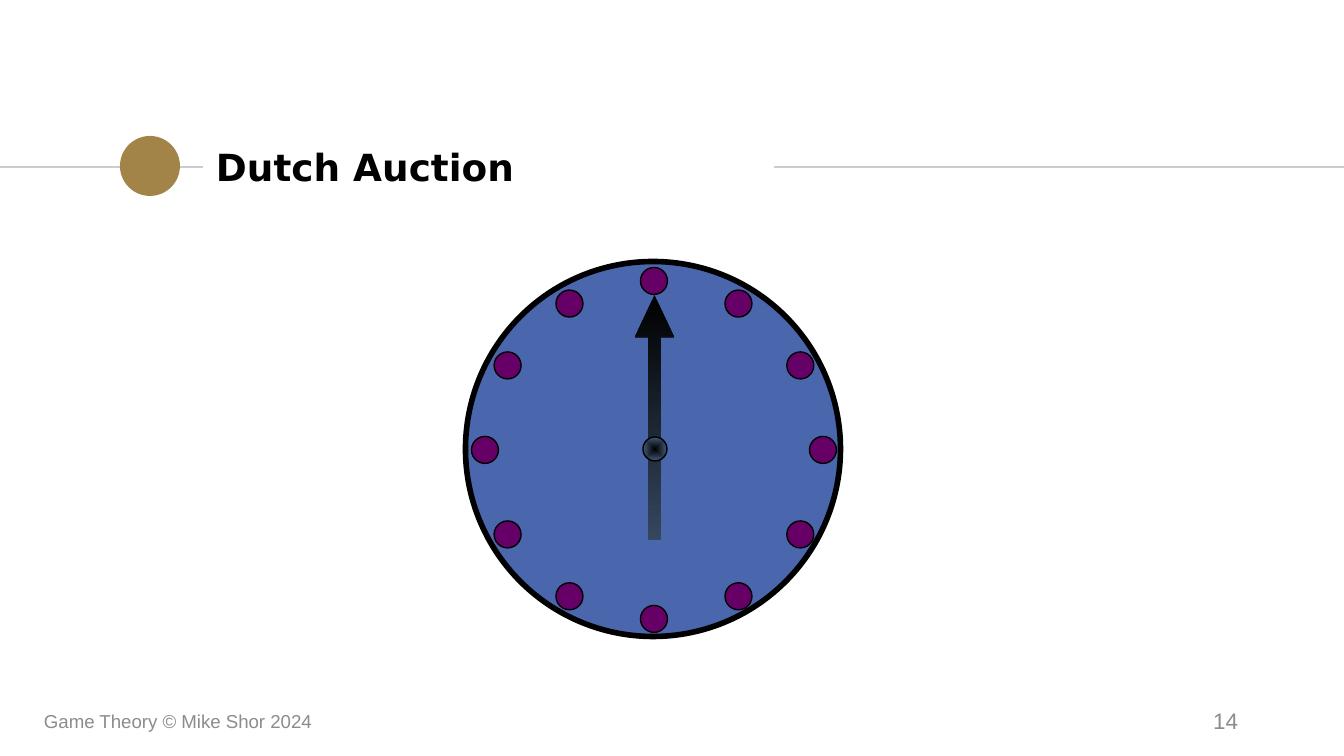
from math import cos, radians, sin

from lxml import etree
from pptx import Presentation
from pptx.dml.color import RGBColor
from pptx.enum.shapes import MSO_CONNECTOR, MSO_SHAPE
from pptx.enum.text import MSO_ANCHOR, PP_ALIGN
from pptx.oxml import parse_xml
from pptx.oxml.ns import nsdecls, qn
from pptx.util import Pt

PX = 914400 / 134.4
OVAL, RECT, UP_ARROW = MSO_SHAPE.OVAL, MSO_SHAPE.RECTANGLE, MSO_SHAPE.UP_ARROW
STRAIGHT = MSO_CONNECTOR.STRAIGHT
MIDDLE = MSO_ANCHOR.MIDDLE
LEFT, RIGHT = PP_ALIGN.LEFT, PP_ALIGN.RIGHT
LEFT_SIDE, RIGHT_SIDE = 1, 3

BLACK = RGBColor(0x00, 0x00, 0x00)
GOLD = RGBColor(0xA2, 0x84, 0x48)
RULE_GREY = RGBColor(0xCC, 0xCC, 0xCC)
FOOTER_GREY = RGBColor(0x8C, 0x8C, 0x8C)
FACE_BLUE = RGBColor(0x4A, 0x66, 0xAC)
MARK_PURPLE = RGBColor(0x66, 0x00, 0x66)
SLATE = RGBColor(0x43, 0x59, 0x77)

TITLE_FONT = {"name": "DejaVu Sans", "size": Pt(20), "bold": True}
FOOTER_FONT = {"name": "Arial", "size": Pt(10)}
NUMBER_FONT = {"name": "Arial", "size": Pt(12)}


def px(*lengths):
    return [round(length * PX) for length in lengths]


class SlideBuilder:
    def __init__(self, slide):
        self.slide = slide
        self.shapes = slide.shapes

    def text(self, box, words, font, color, align=LEFT):
        label = self.shapes.add_textbox(*px(*box))
        frame = label.text_frame
        inset = px(13)[0]
        layout = {"word_wrap": True, "vertical_anchor": MIDDLE,
                  "margin_left": inset, "margin_right": inset}
        for name, value in layout.items():
            setattr(frame, name, value)
        paragraph = frame.paragraphs[0]
        paragraph.alignment = align
        run = paragraph.add_run()
        run.text = words
        for name, value in font.items():
            setattr(run.font, name, value)
        run.font.color.rgb = color
        return label

    def shape(self, kind, box, fill=None, line_width=None):
        shape = self.shapes.add_shape(kind, *px(*box))
        shape.shadow.inherit = False
        if fill is not None:
            shape.fill.solid()
            shape.fill.fore_color.rgb = fill
        if line_width:
            shape.line.color.rgb = BLACK
            shape.line.width = Pt(line_width)
        else:
            shape.line.fill.background()
        return shape

    def disc(self, x, y, size, fill=None, line_width=None):
        box = (x - size / 2, y - size / 2, size, size)
        return self.shape(OVAL, box, fill, line_width)

    def gradient(self, shape, start, end, radial=False):
        shape.fill.gradient()
        for stop, color in zip(shape.fill.gradient_stops, (start, end)):
            stop.color.rgb = color
        if not radial:
            shape.fill.gradient_angle = 270
            return
        linear = shape._element.spPr.find(".//" + qn("a:lin"))
        linear.getparent().replace(linear, parse_xml(
            f'<a:path {nsdecls("a")} path="shape"><a:fillToRect '
            'l="50000" t="50000" r="50000" b="50000"/></a:path>'))

    def rule(self, start_x, end_x, y):
        rule = self.shapes.add_connector(STRAIGHT, *px(start_x, y, end_x, y))
        rule.line.color.rgb = RULE_GREY
        rule.line.width = Pt(0.75)
        etree.SubElement(rule._element.spPr, qn("a:effectLst"))
        return rule


def main():
    deck = Presentation()
    deck.slide_width, deck.slide_height = px(1344, 756)
    builder = SlideBuilder(deck.slides.add_slide(deck.slide_layouts[6]))

    # Title between two rules, with the gold disc on the left one
    title = builder.text((203, 135, 571, 64), "Dutch Auction", TITLE_FONT, BLACK)
    builder.rule(0, 203, 167).end_connect(title, LEFT_SIDE)
    builder.rule(774, 1344, 167).begin_connect(title, RIGHT_SIDE)
    builder.disc(150, 166, 60, GOLD)

    # Clock face with twelve marks
    center_x, center_y, mark_radius = 654, 450, 169
    builder.disc(653, 449, 375, FACE_BLUE, 3)
    for hour in range(12):
        angle = radians(30 * hour)
        builder.disc(center_x + mark_radius * sin(angle),
                     center_y - mark_radius * cos(angle),
                     27, MARK_PURPLE, 0.75)

    # Hand, with its tail cut off by a patch in the face colour
    hand = builder.shape(UP_ARROW, (635, 295, 39, 308))
    hand.adjustments[0] = 0.33
    hand.adjustments[1] = 1.08
    builder.gradient(hand, BLACK, SLATE)
    builder.shape(RECT, (643, 540, 23, 64), FACE_BLUE)
    hub = builder.disc(655, 449, 24, line_width=0.75)
    builder.gradient(hub, BLACK, SLATE, radial=True)

    # Footer and slide number
    builder.text((31, 701, 454, 40), "Game Theory © Mike Shor 2024",
                 FOOTER_FONT, FOOTER_GREY)
    builder.text((949, 701, 302, 40), "14", NUMBER_FONT, FOOTER_GREY, RIGHT)

    deck.save("out.pptx")


if __name__ == "__main__":
    main()
